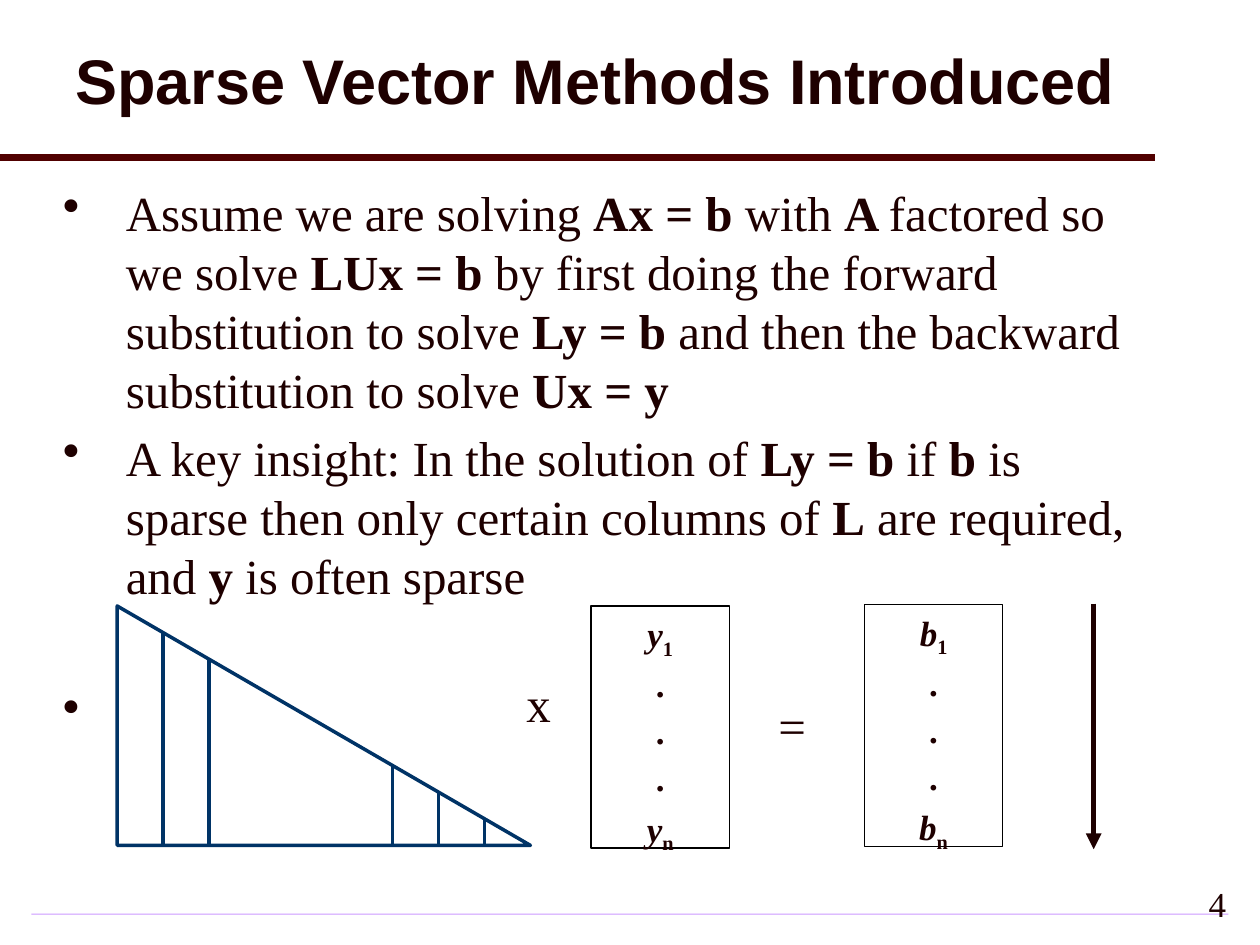
from dataclasses import dataclass

from lxml import etree
from pptx import Presentation
from pptx import util as u
from pptx.dml.color import RGBColor
from pptx.enum import shapes, text
from pptx.oxml.ns import qn


@dataclass(frozen=True)
class Theme:
    ink: str = "1E0000"
    rule: str = "500000"
    footer: str = "CC99FF"
    matrix: str = "003366"
    frame: str = "000000"
    paper: str = "FFFFFF"
    sans: str = "Arial"
    serif: str = "Times New Roman"
    title: int = 36
    body: int = 28
    small: int = 20


def box(*inches):
    return [u.Inches(v) for v in inches]


def apply(obj, formats):
    for name, value in formats.items():
        setattr(obj, name, value)


class Deck:
    def __init__(self, theme):
        self.t = theme
        self.prs = Presentation()
        self.prs.slide_width, self.prs.slide_height = box(10, 7.5)
        self.s = self.prs.slides.add_slide(self.prs.slide_layouts[6])

    def run(self, p, words, size, face=None, baseline=None, **formats):
        r = p.add_run()
        r.text = words
        apply(r.font, {"size": u.Pt(size), "name": face or self.t.serif, **formats})
        r.font.color.rgb = RGBColor.from_string(self.t.ink)
        if baseline:
            r.font._element.set("baseline", str(baseline))

    def shape(self, kind, at, fill, line=None, width=0.75):
        sp = self.s.shapes.add_shape(kind, *box(*at))
        sp.shadow.inherit = False
        sp.fill.solid()
        sp.fill.fore_color.rgb = RGBColor.from_string(fill)
        if line:
            sp.line.color.rgb = RGBColor.from_string(line)
            sp.line.width = u.Pt(width)
        else:
            sp.line.fill.background()
        return sp

    def line(self, start, end, color, width, arrow=False):
        sp = self.s.shapes.add_connector(
            shapes.MSO_CONNECTOR.STRAIGHT, *box(*start, *end))
        sp.line.color.rgb = RGBColor.from_string(color)
        sp.line.width = u.Pt(width)
        if arrow:
            etree.SubElement(sp.line._get_or_add_ln(), qn("a:tailEnd"), type="triangle")
        etree.SubElement(sp._element.spPr, qn("a:effectLst"))

    def frame(self, at, wrap=True, anchor=text.MSO_ANCHOR.TOP):
        tf = self.s.shapes.add_textbox(*box(*at)).text_frame
        apply(tf, {"word_wrap": wrap, "vertical_anchor": anchor})
        return tf

    def label(self, at, words, size, wrap=False, anchor=text.MSO_ANCHOR.TOP,
              align=text.PP_ALIGN.LEFT, spacing=None, **formats):
        p = self.frame(at, wrap, anchor).paragraphs[0]
        apply(p, {"alignment": align, "line_spacing": spacing})
        self.run(p, words, size, **formats)

    def bullets(self, at, items):
        tf = self.frame(at)
        for i, (words, gap) in enumerate(items):
            p = tf.add_paragraph() if i else tf.paragraphs[0]
            pPr = p._p.get_or_add_pPr()
            pPr.set("marL", str(u.Inches(0.5)))
            pPr.set("indent", str(u.Inches(-0.5)))
            color = etree.SubElement(pPr, qn("a:buClr"))
            etree.SubElement(color, qn("a:srgbClr"), val=self.t.ink)
            etree.SubElement(pPr, qn("a:buChar"), char="•")
            p.space_before = u.Pt(gap)
            for j, part in enumerate(words.split("*")):
                if part:
                    self.run(p, part, self.t.body, bold=j % 2 == 1)

    def vector(self, at, letter):
        sp = self.shape(shapes.MSO_SHAPE.RECTANGLE, at, self.t.paper, self.t.frame)
        tf = sp.text_frame
        apply(tf, {"word_wrap": True, "vertical_anchor": text.MSO_ANCHOR.TOP})
        for i, index in enumerate(["1", "", "", "", "n"]):
            p = tf.add_paragraph() if i else tf.paragraphs[0]
            apply(p, {"alignment": text.PP_ALIGN.CENTER, "line_spacing": 0.96,
                      "space_before": u.Pt(4 if i else 0)})
            self.run(p, letter if index else ".", self.t.small,
                     bold=True, italic=bool(index))
            if index:
                self.run(p, index, self.t.small, baseline=-25000, bold=True, italic=False)

    def lower_triangle(self, at, columns, count):
        left, top, width, height = at
        self.shape(shapes.MSO_SHAPE.RIGHT_TRIANGLE, at, self.t.paper, self.t.matrix, 2)
        for i in columns:
            x = left + width * i / count
            self.line((x, top + height * i / count), (x, top + height),
                      self.t.matrix, 2)


def main():
    t = Theme()
    d = Deck(t)
    d.shape(shapes.MSO_SHAPE.RECTANGLE, (0.25, 7.25, 9.5, 0.01), t.footer)
    d.line((0, 1.25), (9.17, 1.25), t.rule, 4)
    d.label((0.5, 0.08, 8.75, 1.17), "Sparse Vector Methods Introduced", t.title,
            wrap=True, anchor=text.MSO_ANCHOR.MIDDLE, spacing=0.9,
            face=t.sans, bold=True)
    d.bullets((0.4, 1.4, 8.75, 4.08), [
        ("Assume we are solving *Ax = b* with *A *factored so we solve *LUx = b *"
         "by first doing the forward substitution to solve *Ly = b* and then "
         "the backward substitution to solve *Ux = y*", 0),
        ("A key insight: In the solution of *Ly = b* if *b* is sparse then only "
         "certain columns of *L* are required, and *y* is often sparse", 5.6),
        ("*=*", 45),
    ])
    d.vector((4.69, 4.81, 1.1, 1.92), "y")
    d.vector((6.86, 4.8, 1.1, 1.92), "b")
    d.line((8.68, 4.79), (8.68, 6.74), t.ink, 3, arrow=True)
    d.lower_triangle((0.93, 4.81, 3.28, 1.9), (1, 2, 6, 7, 8), 9)
    d.label((7.75, 6.92, 2.08, 0.5), "4", t.small, wrap=True,
            anchor=text.MSO_ANCHOR.MIDDLE, align=text.PP_ALIGN.RIGHT)
    d.label((6.08, 5.47, 0.42, 0.57), "=", t.body)
    d.label((4.08, 5.3, 0.4, 0.57), "x", t.body)
    d.prs.save("out.pptx")


if __name__ == "__main__":
    main()
